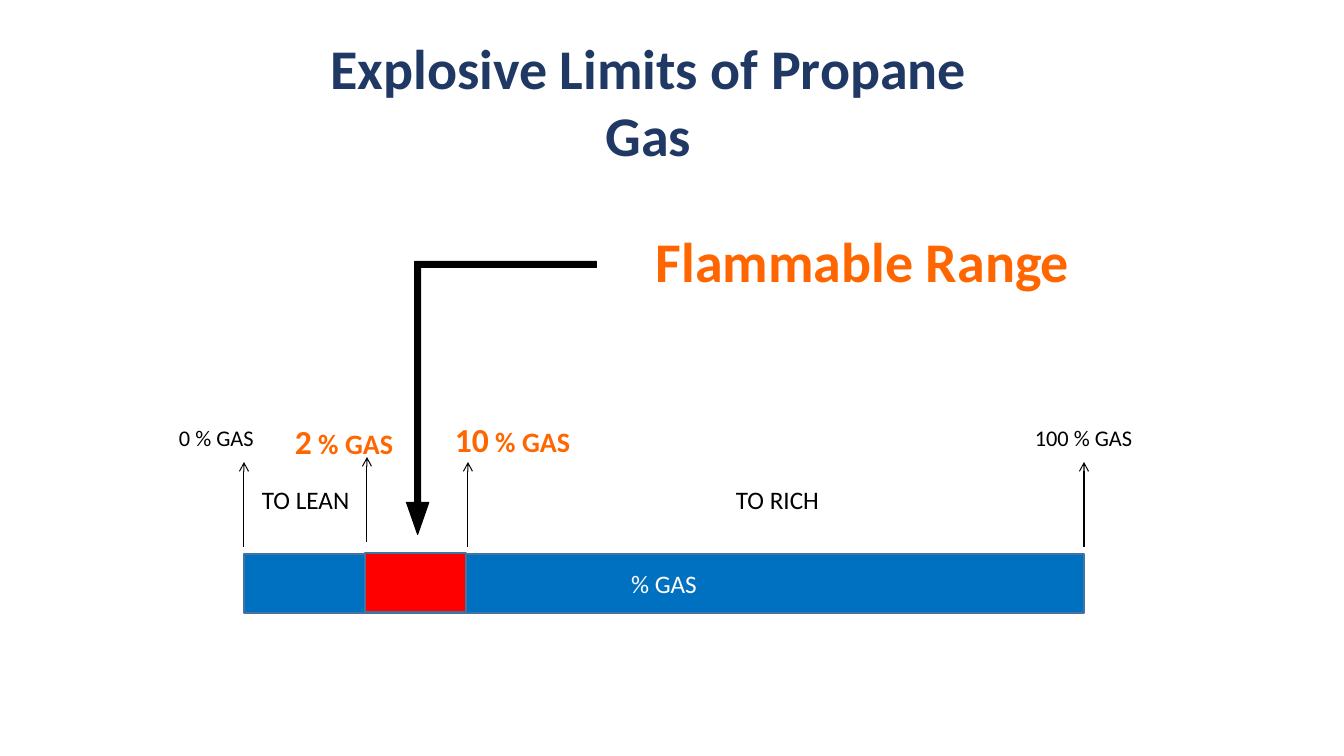
from dataclasses import dataclass

from lxml.etree import SubElement
from pptx import Presentation
from pptx.dml.color import RGBColor as Rgb
from pptx.enum.shapes import MSO_CONNECTOR as Link, MSO_SHAPE as Kind
from pptx.enum.text import MSO_ANCHOR as Anchor, PP_ALIGN as Align
from pptx.oxml.ns import qn
from pptx.util import Emu, Pt

UNIT = 914400 / 100.8  # EMU in one px


@dataclass(frozen=True)
class Theme:
    font: str = "Calibri"
    navy: str = "203864"
    blue: str = "0070C0"
    edge: str = "43739E"
    red: str = "FF0000"
    hot: str = "FF6600"
    black: str = "000000"
    white: str = "FFFFFF"
    big: int = 40
    value: int = 24
    unit: int = 20
    body: int = 18
    small: int = 16


T = Theme()


def px(num):
    return Emu(round(num * UNIT))


def style(run, size, color, bold=False):
    font = run.font
    font.name, font.size, font.bold = T.font, Pt(size), bold
    font.color.rgb = Rgb.from_string(color)


def title(slide, text, box):
    head = slide.shapes.title
    head.left, head.top, head.width, head.height = map(px, box)
    frame = head.text_frame
    frame.text = text
    frame.word_wrap = True
    frame.vertical_anchor = Anchor.TOP
    para = frame.paragraphs[0]
    para.alignment = Align.CENTER
    style(para.runs[0], T.big, T.navy, True)


def label(slide, parts, box, color=T.black, bold=False, wrap=False,
          align=Align.LEFT):
    """Add one line of text; parts are (text, size) pairs."""
    frame = slide.shapes.add_textbox(*map(px, box)).text_frame
    frame.word_wrap = wrap
    para = frame.paragraphs[0]
    para.alignment = align
    for text, size in parts:
        run = para.add_run()
        run.text = text
        style(run, size, color, bold)


def block(slide, kind, box, fill, edge, width=1):
    shape = slide.shapes.add_shape(kind, *map(px, box))
    shape.shadow.inherit = False
    shape.fill.solid()
    shape.fill.fore_color.rgb = Rgb.from_string(fill)
    shape.line.color.rgb = Rgb.from_string(edge)
    shape.line.width = Pt(width)
    return shape


def tick(slide, left, base, rise=85):
    """Add a thin arrow that points up from the scale."""
    line = slide.shapes.add_connector(
        Link.STRAIGHT, px(left), px(base), px(left), px(base - rise))
    line.line.color.rgb = Rgb.from_string(T.black)
    line.line.width = Pt(0.75)
    SubElement(line.line._get_or_add_ln(), qn("a:tailEnd"), type="arrow")
    SubElement(line._element.spPr, qn("a:effectLst"))


def bend(slide, box):
    """Add the bent arrow that leads down to the flammable range."""
    arrow = block(slide, Kind.BENT_ARROW, box, T.black, T.black, 0.75)
    for spot, part in enumerate((0.031, 0.059, 0.169, 0)):
        arrow.adjustments[spot] = part
    arrow.rotation = 270
    arrow._element.spPr.xfrm.set("flipH", "1")


def main():
    deck = Presentation()
    deck.slide_width, deck.slide_height = px(1344), px(756)
    slide = deck.slides.add_slide(deck.slide_layouts[5])
    title(slide, "Explosive Limits of Propane Gas", (288, 28, 721, 146))

    # Scale bar and flammable part
    bar = block(slide, Kind.RECTANGLE, (244, 554, 840, 59), T.blue, T.edge)
    frame = bar.text_frame
    frame.text = "% GAS"
    frame.vertical_anchor = Anchor.MIDDLE
    frame.paragraphs[0].alignment = Align.CENTER
    style(frame.paragraphs[0].runs[0], T.body, T.white)
    block(slide, Kind.RECTANGLE, (365, 553, 101, 59), T.red, T.edge)

    # Limit marks
    for left, base in ((244, 547), (367, 542), (468, 547), (1084, 547)):
        tick(slide, left, base)

    # Ends of the scale
    label(slide, [("0 % GAS", T.small)], (169, 419, 96, 37))
    label(slide, [("100 % GAS", T.small)], (1013, 419, 141, 37),
          wrap=True, align=Align.CENTER)

    # Flammable limits
    for value, box in (("2", (285, 416, 120, 50)),
                       ("10", (445, 414, 137, 50))):
        label(slide, [(value, T.value), (" % GAS", T.unit)], box, T.hot, True)

    # Zones
    for text, box in (("TO LEAN", (252, 479, 109, 40)),
                      ("TO RICH", (726, 479, 104, 40))):
        label(slide, [(text, T.body)], box)
    label(slide, [("Flammable Range", T.big)], (646, 222, 436, 78),
          T.hot, True, wrap=True)
    bend(slide, (365, 303, 273, 190))

    deck.save("out.pptx")


if __name__ == "__main__":
    main()
